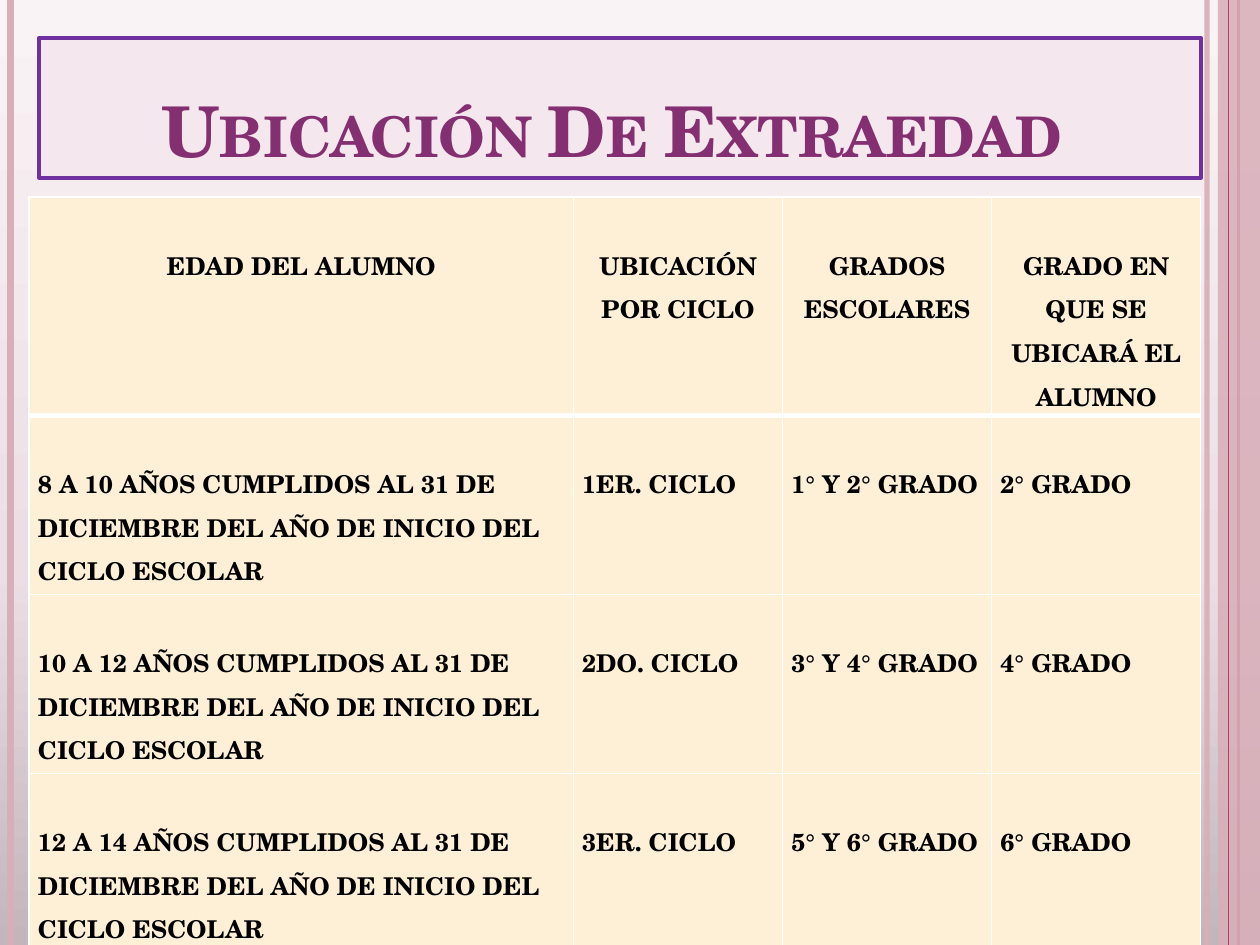
import copy
from typing import Any, NamedTuple

import pptx
import pptx.dml.color
import pptx.enum.dml
import pptx.enum.shapes
import pptx.enum.text
import pptx.oxml.ns
import pptx.oxml.xmlchemy
import pptx.util

Pt = pptx.util.Pt
ALIGN = pptx.enum.text.PP_ALIGN
FONT = "TeX Gyre Schola"
WIDE, HIGH = 720, 540
HUE = {
    "low": "C2B5BB", "mid": "EBDEE4", "top": "FAF3F6",
    "pink": "D8AFB9", "rose": "B83D68", "panel": "F4E7ED",
    "frame": "7030A0", "title": "852F73", "cell": "FEF0D7",
    "rule": "FFFFFF", "text": "000000",
}
COLS = [311, 119.5, 119.5, 119.5]
ROWS = [84.25, 102.25, 102.25, 102.25]
HEADS = ["EDAD DEL ALUMNO", "UBICACIÓN POR CICLO", "GRADOS ESCOLARES",
         "GRADO EN QUE SE UBICARÁ EL ALUMNO"]


class Stripe(NamedTuple):
    x: float
    width: float
    hue: str
    alpha: int = 100


class Level(NamedTuple):
    start: int
    cycle: str
    grade: int

    def texts(self) -> list[str]:
        return [
            f"{self.start} A {self.start + 2} AÑOS CUMPLIDOS AL 31 DE "
            "DICIEMBRE DEL AÑO DE INICIO DEL CICLO ESCOLAR",
            f"{self.cycle} CICLO",
            f"{self.grade - 1}° Y {self.grade}° GRADO",
            f"{self.grade}° GRADO",
        ]


STRIPES = [
    Stripe(689.75, 3, "pink", 93),
    Stripe(6, 4.5, "pink"),
    Stripe(707.75, 1.5, "rose"),
    Stripe(702, 0.75, "rose"),
]
LEVELS = [Level(8, "1ER.", 2), Level(10, "2DO.", 4), Level(12, "3ER.", 6)]


def rgb(hue: str) -> pptx.dml.color.RGBColor:
    return pptx.dml.color.RGBColor.from_string(HUE[hue])


def apply(item: Any, form: dict[str, Any]) -> None:
    for key, value in form.items():
        setattr(item, key, value)


def paint(fill: Any, hue: str) -> None:
    fill.solid()
    fill.fore_color.rgb = rgb(hue)


def node(host: Any, tag: str, **attrs: str) -> Any:
    """Append a child element to host and return it."""
    child = pptx.oxml.xmlchemy.OxmlElement(tag)
    for key, value in attrs.items():
        child.set(key, value)
    host.append(child)
    return child


def fade(shape: Any, alpha: int) -> None:
    """Set the opacity, in percent, of the shape's first colour."""
    tint = shape._element.spPr.find(".//" + pptx.oxml.ns.qn("a:srgbClr"))
    node(tint, "a:alpha", val=str(alpha * 1000))


def style(par: Any, size: float, hue: str) -> None:
    apply(par.font, {"name": FONT, "size": Pt(size), "bold": True})
    par.font.color.rgb = rgb(hue)


def draw_back(slide: Any) -> None:
    fill = slide.background.fill
    fill.gradient()
    fill.gradient_angle = 90
    stops = slide._element.find(".//" + pptx.oxml.ns.qn("a:gsLst"))
    stops.append(copy.deepcopy(stops[0]))
    for stop, (place, hue) in zip(
            fill.gradient_stops, [(0, "low"), (0.4, "mid"), (1, "top")]):
        stop.position = place
        stop.color.rgb = rgb(hue)


def draw_stripe(slide: Any, stripe: Stripe) -> None:
    line = slide.shapes.add_connector(
        pptx.enum.shapes.MSO_CONNECTOR.STRAIGHT,
        Pt(stripe.x), 0, Pt(stripe.x), Pt(HIGH))
    line.line.width = Pt(stripe.width)
    line.line.color.rgb = rgb(stripe.hue)
    node(line._element.spPr, "a:effectLst")
    if stripe.alpha < 100:
        fade(line, stripe.alpha)


def draw_band(slide: Any) -> None:
    left = 696
    band = slide.shapes.add_shape(
        pptx.enum.shapes.MSO_SHAPE.RECTANGLE,
        Pt(left), 0, Pt(WIDE - left), Pt(HIGH))
    paint(band.fill, "pink")
    fade(band, 87)
    band.line.fill.background()
    band.shadow.inherit = False


def draw_title(slide: Any) -> None:
    title = slide.shapes.title
    apply(title, {"left": Pt(22.3), "top": Pt(21.6),
                  "width": Pt(664), "height": Pt(80)})
    paint(title.fill, "panel")
    title.line.color.rgb = rgb("frame")
    title.line.width = Pt(2.25)
    frame = title.text_frame
    # The closing space shifts the centred line slightly to the left.
    frame.text = "Ubicación De Extraedad "
    apply(frame, {"vertical_anchor": pptx.enum.text.MSO_ANCHOR.BOTTOM,
                  "auto_size": pptx.enum.text.MSO_AUTO_SIZE.NONE,
                  "word_wrap": True})
    par = frame.paragraphs[0]
    par.alignment = ALIGN.CENTER
    run = par.runs[0]
    style(run, 40, "title")
    run.font._element.set("cap", "small")


def edge(cell: Any, row: int) -> None:
    """Draw the cell borders, with a thick rule under the header."""
    props = cell._tc.get_or_add_tcPr()
    widths = {"L": 1, "R": 1, "T": 3 if row == 1 else 1,
              "B": 3 if row == 0 else 1}
    for side, width in widths.items():
        line = node(props, "a:ln" + side, w=str(Pt(width)))
        node(node(line, "a:solidFill"), "a:srgbClr", val=HUE["rule"])


def draw_cell(cell: Any, text: str, row: int) -> None:
    edge(cell, row)
    paint(cell.fill, "cell")
    apply(cell, {"margin_left": Pt(5), "margin_right": Pt(5),
                 "margin_top": Pt(25), "margin_bottom": 0})
    cell.text = text
    par = cell.text_frame.paragraphs[0]
    apply(par, {"line_spacing": 1.15,
                "alignment": ALIGN.LEFT if row else ALIGN.CENTER})
    style(par.runs[0], 14, "text")


def draw_table(slide: Any) -> None:
    table = slide.shapes.add_table(
        len(ROWS), len(COLS), Pt(16.7), Pt(112.6),
        Pt(sum(COLS)), Pt(sum(ROWS))).table
    for col, width in zip(table.columns, COLS):
        col.width = Pt(width)
    for row, height in zip(table.rows, ROWS):
        row.height = Pt(height)
    for i, texts in enumerate([HEADS] + [lev.texts() for lev in LEVELS]):
        for j, text in enumerate(texts):
            draw_cell(table.cell(i, j), text, i)


def main() -> None:
    deck = pptx.Presentation()
    apply(deck, {"slide_width": Pt(WIDE), "slide_height": Pt(HIGH)})
    slide = deck.slides.add_slide(deck.slide_layouts[5])
    draw_back(slide)
    for stripe in STRIPES[:-1]:
        draw_stripe(slide, stripe)
    draw_band(slide)
    draw_stripe(slide, STRIPES[-1])
    draw_title(slide)
    draw_table(slide)
    deck.save("out.pptx")


if __name__ == "__main__":
    main()
